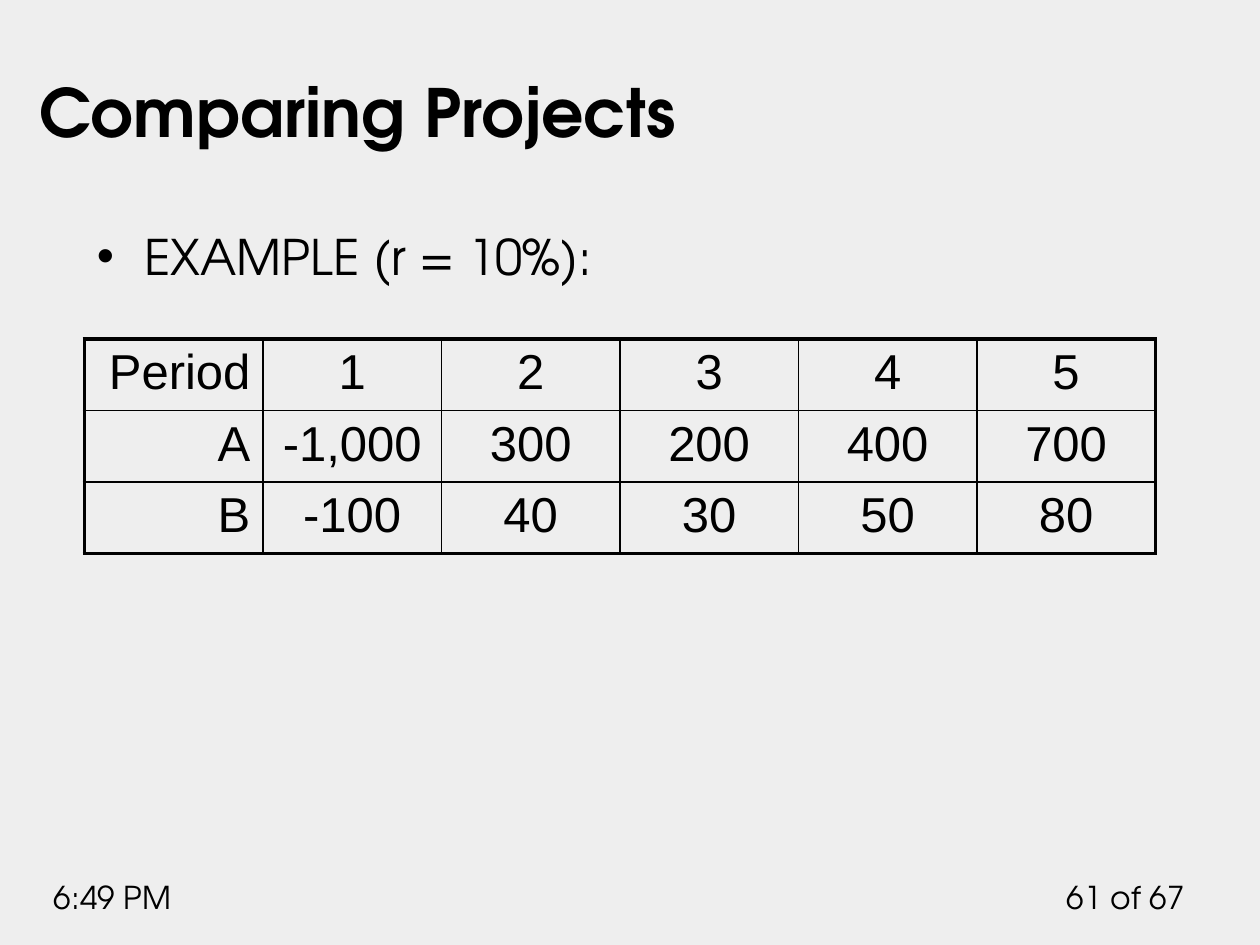
import dataclasses

import lxml.etree
import pptx
import pptx.dml.color
import pptx.enum.text
import pptx.oxml.ns
import pptx.util

Inches = pptx.util.Inches
Pt = pptx.util.Pt
Align = pptx.enum.text.PP_ALIGN
qn = pptx.oxml.ns.qn


@dataclasses.dataclass(frozen=True)
class Theme:
    background: str = "EEEEEE"
    ink: str = "000000"
    font: str = "TeX Gyre Adventor"
    table_font: str = "Arial"
    title: int = 38
    body: int = 28
    footer: int = 18
    inner: float = 1
    outer: float = 2.25


THEME = Theme()

ROWS = [
    ["Period", "1", "2", "3", "4", "5"],
    ["A", "-1,000", "300", "200", "400", "700"],
    ["B", "-100", "40", "30", "50", "80"],
]
ROW_HEIGHTS = [0.38, 0.57, 0.39]


def rgb(value):
    return pptx.dml.color.RGBColor.from_string(value)


def write(tf, text, size=THEME.body, font=THEME.font, bold=False, align=Align.LEFT):
    p = tf.paragraphs[0]
    p.alignment = align
    r = p.add_run()
    r.text = text
    r.font.name = font
    r.font.size = Pt(size)
    r.font.bold = bold
    r.font.color.rgb = rgb(THEME.ink)
    return p


def place(sp, left, top, width, height):
    sp.left, sp.top = Inches(left), Inches(top)
    sp.width, sp.height = Inches(width), Inches(height)


def add_title(s, text):
    sp = s.shapes.title
    place(sp, 0.21, 0.25, 8.77, 1)
    tf = sp.text_frame
    tf.auto_size = pptx.enum.text.MSO_AUTO_SIZE.NONE
    tf.vertical_anchor = pptx.enum.text.MSO_ANCHOR.BOTTOM
    write(tf, text, size=THEME.title, bold=True)


def add_text(s, text, left, top, width, height, **kwargs):
    sp = s.shapes.add_textbox(Inches(left), Inches(top), Inches(width), Inches(height))
    sp.text_frame.word_wrap = True
    return write(sp.text_frame, text, **kwargs)


def add_bullet(p, indent):
    pPr = p._p.get_or_add_pPr()
    pPr.set("marL", str(Inches(indent)))
    pPr.set("indent", str(-Inches(indent)))
    lxml.etree.SubElement(pPr, qn("a:buFont"), typeface=THEME.table_font)
    lxml.etree.SubElement(pPr, qn("a:buChar"), char="•")


def set_borders(cell, outer_sides):
    tcPr = cell._tc.get_or_add_tcPr()
    for side in "LRTB":
        width = THEME.outer if side in outer_sides else THEME.inner
        ln = lxml.etree.SubElement(tcPr, qn(f"a:ln{side}"), w=str(Pt(width)))
        fill = lxml.etree.SubElement(ln, qn("a:solidFill"))
        lxml.etree.SubElement(fill, qn("a:srgbClr"), val=THEME.ink)


def add_cash_flows(s):
    last_row, last_col = len(ROWS) - 1, len(ROWS[0]) - 1
    frame = s.shapes.add_table(
        len(ROWS), len(ROWS[0]), Inches(0.67), Inches(2.69), Inches(8.5), Inches(1.71)
    )
    table = frame.table
    table.first_row = table.horz_banding = False
    for row, height in zip(table.rows, ROW_HEIGHTS):
        row.height = Inches(height)
    for i, values in enumerate(ROWS):
        for j, value in enumerate(values):
            cell = table.cell(i, j)
            edges = {"L": j == 0, "R": j == last_col, "T": i == 0, "B": i == last_row}
            set_borders(cell, [side for side, outer in edges.items() if outer])
            cell.fill.background()
            align = Align.RIGHT if j == 0 else Align.CENTER
            write(cell.text_frame, value, font=THEME.table_font, align=align)


def main():
    prs = pptx.Presentation()
    prs.slide_width, prs.slide_height = Inches(10), Inches(7.5)
    s = prs.slides.add_slide(prs.slide_layouts[5])
    s.background.fill.solid()
    s.background.fill.fore_color.rgb = rgb(THEME.background)

    add_text(s, "61 of 67", 8.33, 6.92, 1.17, 0.4, size=THEME.footer, align=Align.RIGHT)
    add_text(s, "6:49 PM", 0.33, 6.92, 1.58, 0.4, size=THEME.footer)
    add_title(s, "Comparing Projects")
    add_bullet(add_text(s, "EXAMPLE (r = 10%):", 0.67, 1.75, 8.58, 4.83), 0.38)
    add_cash_flows(s)
    prs.save("out.pptx")


if __name__ == "__main__":
    main()
